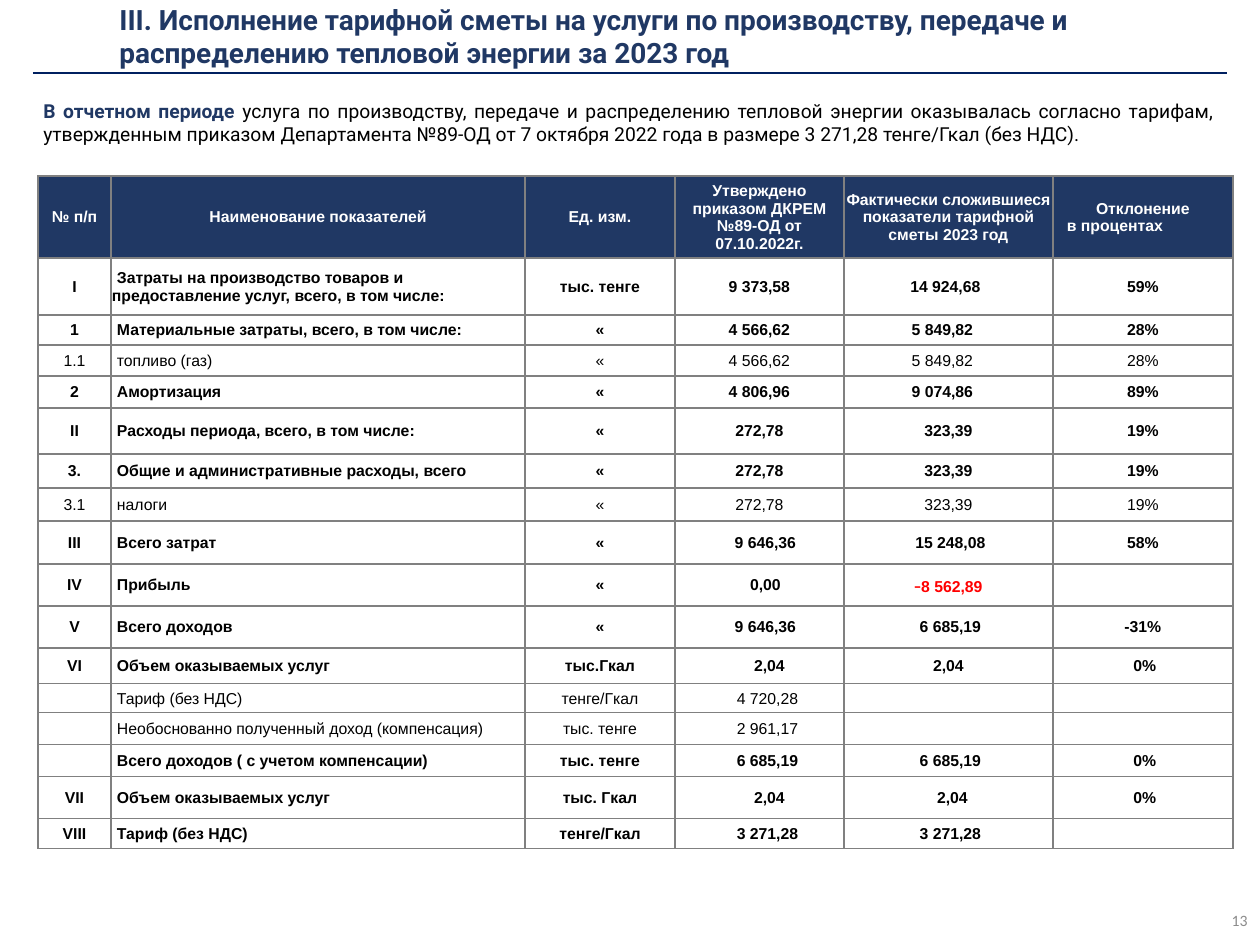
from typing import NamedTuple

from lxml import etree
from pptx import Presentation
from pptx import util as u
from pptx.dml.color import RGBColor
from pptx.enum import shapes, text
from pptx.oxml.ns import qn

PX_PER_INCH = 126
NAVY, BLACK, WHITE, RED, GREY = "203864", "000000", "FFFFFF", "FF0000", "808080"
LEFT, CENTER, RIGHT, JUSTIFY = (
    text.PP_ALIGN.LEFT, text.PP_ALIGN.CENTER, text.PP_ALIGN.RIGHT, text.PP_ALIGN.JUSTIFY)
TOP, MIDDLE = text.MSO_ANCHOR.TOP, text.MSO_ANCHOR.MIDDLE


class Run(NamedTuple):
    text: str
    size: int = 9
    font: str = "Arial"
    color: str = BLACK
    bold: bool = False


class Box(NamedTuple):
    x: int
    y: int
    w: int
    h: int
    runs: list[Run]
    align: text.PP_ALIGN = LEFT
    anchor: text.MSO_ANCHOR = TOP


class Row(NamedTuple):
    height: int
    bold: bool
    texts: tuple[str, ...]
    approved_shift: int = 0
    actual_shift: int = 0
    deviation_shift: int = 0


COLUMNS = (73, 414, 150, 169, 209, 180)
HEADER_HEIGHT = 82
HEADERS = (
    "№ п/п", "Наименование показателей", "Ед. изм.",
    "Утверждено приказом ДКРЕМ №89-ОД от 07.10.2022г.",
    "Фактически сложившиеся показатели тарифной сметы 2023 год",
    "Отклонение\nв процентах",
)
LOSS = "-8 562,89"
ROWS = [
    Row(57, True, ("I", "Затраты на производство товаров и предоставление услуг, всего, в том числе:",
                   "тыс. тенге", "9 373,58", "14 924,68", "59%"), 0, -3),
    Row(30, True, ("1", "Материальные затраты, всего, в том числе:",
                   "«", "4 566,62", "5 849,82", "28%"), 0, -6),
    Row(31, False, ("1.1", "топливо (газ)", "«", "4 566,62", "5 849,82", "28%"), 0, -6),
    Row(32, True, ("2", "Амортизация", "«", "4 806,96", "9 074,86", "89%"), 0, -6),
    Row(46, True, ("II", "Расходы периода, всего, в том числе:",
                   "«", "272,78", "323,39", "19%")),
    Row(34, True, ("3.", "Общие и административные расходы, всего",
                   "«", "272,78", "323,39", "19%")),
    Row(33, False, ("3.1", "налоги", "«", "272,78", "323,39", "19%")),
    Row(43, True, ("III", "Всего затрат", "«", "9 646,36", "15 248,08", "58%"), 6, 2),
    Row(42, True, ("IV", "Прибыль", "«", "0,00", LOSS, ""), 6),
    Row(42, True, ("V", "Всего доходов", "«", "9 646,36", "6 685,19", "-31%"), 6, 2),
    Row(36, True, ("VI", "Объем оказываемых услуг", "тыс.Гкал", "2,04", "2,04", "0%"), 10, 0, 2),
    Row(29, False, ("", "Тариф (без НДС)", "тенге/Гкал", "4 720,28", "", ""), 8),
    Row(32, False, ("", "Необоснованно полученный доход (компенсация)",
                    "тыс. тенге", "2 961,17", "", ""), 8),
    Row(32, True, ("", "Всего доходов ( с учетом компенсации)",
                   "тыс. тенге", "6 685,19", "6 685,19", "0%"), 8, 2, 2),
    Row(42, True, ("VII", "Объем оказываемых услуг", "тыс. Гкал", "2,04", "2,04", "0%"), 10, 4, 2),
    Row(30, True, ("VIII", "Тариф (без НДС)", "тенге/Гкал", "3 271,28", "3 271,28", ""), 8, 2),
]

BOXES = [
    Box(976, 895, 284, 50, [Run("13", 9, "Calibri", "8C8C8C")], RIGHT, MIDDLE),
    Box(107, -4, 1125, 72, [Run(
        "III. Исполнение тарифной сметы на услуги по производству, передаче и "
        "распределению тепловой энергии за 2023 год", 16, "Roboto", NAVY, True)]),
    Box(31, 93, 1196, 59, [
        Run("В отчетном периоде ", 11, "Roboto", NAVY, True),
        Run("услуга по производству, передаче и распределению тепловой энергии оказывалась "
            "согласно тарифам, утвержденным приказом Департамента №89-ОД от 7 октября 2022 года "
            "в размере 3 271,28 тенге/Гкал (без НДС).", 11, "Roboto")], JUSTIFY),
]


def px(n: int) -> u.Emu:
    return u.Emu(round(n * 914400 / PX_PER_INCH))


def rgb(color: str) -> RGBColor:
    return RGBColor.from_string(color)


def add_runs(p, runs: list[Run]) -> None:
    for run in runs:
        r = p.add_run()
        r.text = run.text
        r.font.size = u.Pt(run.size)
        r.font.name = run.font
        r.font.bold = run.bold
        r.font.color.rgb = rgb(run.color)


def add_box(s, box: Box) -> None:
    tf = s.shapes.add_textbox(px(box.x), px(box.y), px(box.w), px(box.h)).text_frame
    tf.word_wrap = True
    tf.vertical_anchor = box.anchor
    p = tf.paragraphs[0]
    p.alignment = box.align
    add_runs(p, box.runs)


def shift_center(p, shift: int) -> None:
    if shift:
        p._p.get_or_add_pPr().set("marL" if shift > 0 else "marR", str(px(2 * abs(shift))))


def add_borders(cell) -> None:
    pr = cell._tc.get_or_add_tcPr()
    for i, side in enumerate(("lnL", "lnR", "lnT", "lnB")):
        ln = etree.Element(qn(f"a:{side}"), w=str(u.Pt(1)))
        fill = etree.SubElement(ln, qn("a:solidFill"))
        etree.SubElement(fill, qn("a:srgbClr"), val=GREY)
        pr.insert(i, ln)


def format_cell(cell, fill: str | None = None) -> None:
    cell.margin_left = cell.margin_top = cell.margin_right = px(1)
    cell.margin_bottom = 0
    cell.vertical_anchor = MIDDLE
    if fill:
        cell.fill.solid()
        cell.fill.fore_color.rgb = rgb(fill)
    else:
        cell.fill.background()
    add_borders(cell)


def fill_header(cell, label: str) -> None:
    format_cell(cell, NAVY)
    tf = cell.text_frame
    for i, line in enumerate(label.split("\n")):
        p = tf.add_paragraph() if i else tf.paragraphs[0]
        p.alignment = CENTER
        shift_center(p, -28 * i)
        add_runs(p, [Run(line, color=WHITE, bold=True)])


def fill_row(cells, row: Row) -> None:
    shifts = (0, 0, 0, row.approved_shift, row.actual_shift, row.deviation_shift)
    for i, (cell, value, shift) in enumerate(zip(cells, row.texts, shifts)):
        format_cell(cell)
        p = cell.text_frame.paragraphs[0]
        p.alignment = LEFT if i == 1 else CENTER
        if i == 1:
            p._p.get_or_add_pPr().set("indent", str(px(5)))
        shift_center(p, shift)
        if value == LOSS:
            add_runs(p, [Run(value[0], 12, "Times New Roman", RED),
                         Run(value[1:], color=RED, bold=True)])
        elif value:
            add_runs(p, [Run(value, bold=row.bold)])
        else:
            etree.SubElement(p._p, qn("a:endParaRPr"), sz="900")


def add_estimate_table(s) -> None:
    heights = [HEADER_HEIGHT] + [row.height for row in ROWS]
    table = s.shapes.add_table(len(heights), len(COLUMNS), px(38), px(176),
                               px(sum(COLUMNS)), px(sum(heights))).table
    table.horz_banding = False
    table.first_row = False
    for column, width in zip(table.columns, COLUMNS):
        column.width = px(width)
    for table_row, height in zip(table.rows, heights):
        table_row.height = px(height)
    for cell, label in zip(table.rows[0].cells, HEADERS):
        fill_header(cell, label)
    for i, row in enumerate(ROWS, 1):
        fill_row(table.rows[i].cells, row)


def add_rule(s) -> None:
    line = s.shapes.add_connector(shapes.MSO_CONNECTOR.STRAIGHT, px(33), px(73), px(1227), px(73))
    line.line.color.rgb = rgb("002060")
    line.line.width = u.Pt(1)
    etree.SubElement(line._element.spPr, qn("a:effectLst"))


def main() -> None:
    prs = Presentation()
    prs.slide_width, prs.slide_height = px(1260), px(945)
    s = prs.slides.add_slide(prs.slide_layouts[6])
    add_estimate_table(s)
    add_rule(s)
    for box in BOXES:
        add_box(s, box)
    prs.save("out.pptx")


if __name__ == "__main__":
    main()
